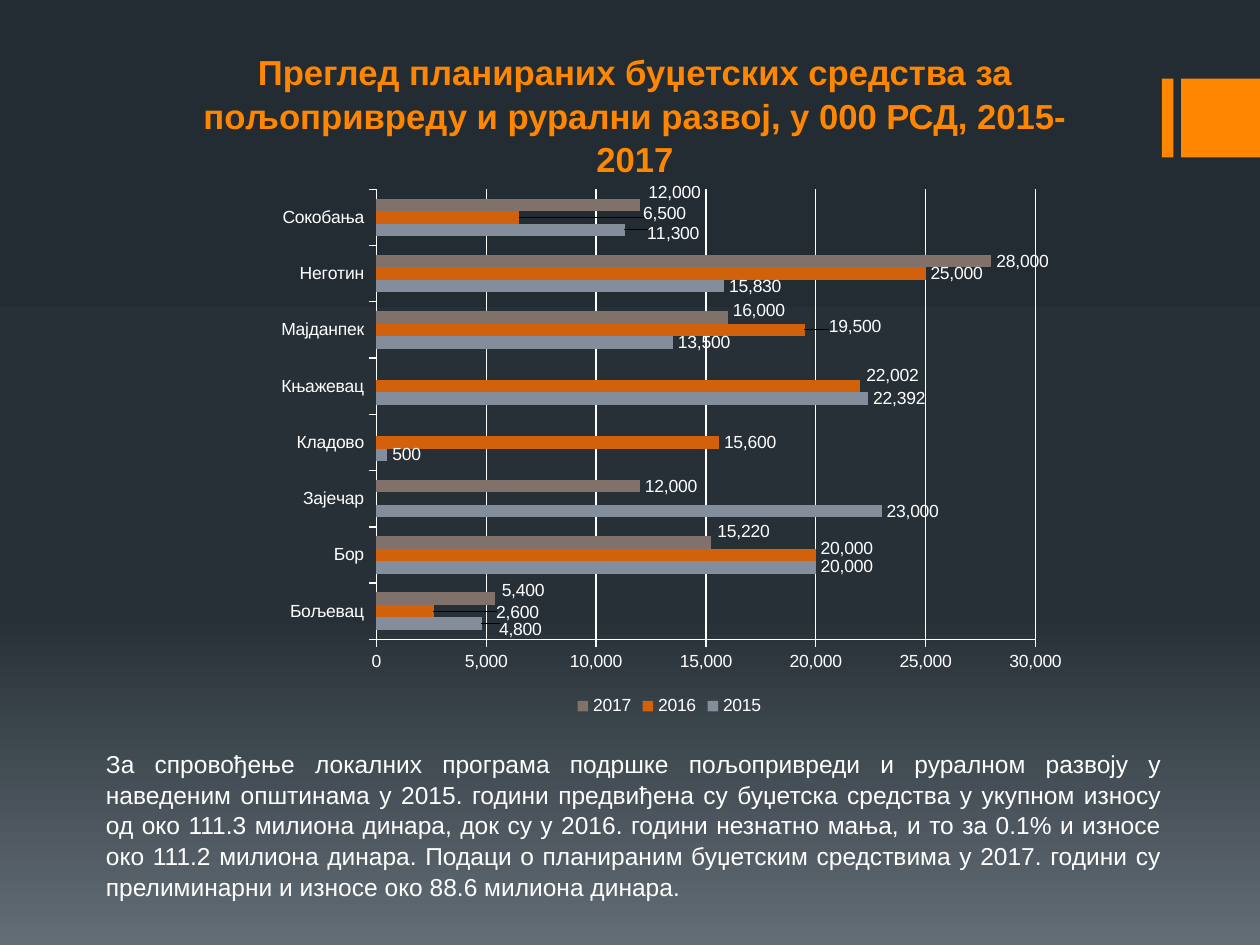
from copy import deepcopy

from lxml.etree import SubElement
from pptx import Presentation
from pptx.chart.data import CategoryChartData
from pptx.dml.color import RGBColor
from pptx.enum.chart import XL_CHART_TYPE as ChartType
from pptx.enum.chart import XL_LABEL_POSITION as LabelPosition
from pptx.enum.chart import XL_LEGEND_POSITION as LegendPosition
from pptx.enum.chart import XL_TICK_MARK as TickMark
from pptx.enum.shapes import MSO_SHAPE as Shape
from pptx.enum.text import MSO_ANCHOR as Anchor
from pptx.enum.text import PP_ALIGN as Align
from pptx.oxml.ns import qn
from pptx.util import Pt

FONT, WHITE, ORANGE = "Arial", "FFFFFF", "FF8600"
NUMBER_FORMAT = "#,##0"

TITLE = ("Преглед планираних буџетских средства за пољопривреду "
         "и рурални развој, у 000 РСД, 2015-2017")
SUMMARY = (
    "За спровођење локалних програма подршке пољопривреди и руралном развоју у "
    "наведеним општинама у 2015. години предвиђена су буџетска средства у укупном "
    "износу од око 111.3 милиона динара, док су у 2016. години незнатно мања, и то "
    "за 0.1% и износе око 111.2 милиона динара. Подаци о планираним буџетским "
    "средствима у 2017. години су прелиминарни и износе око 88.6 милиона динара.")

TOWNS = ["Бољевац", "Бор", "Зајечар", "Кладово",
         "Књажевац", "Мајданпек", "Неготин", "Сокобања"]
# Year: bar colour, values, label shifts in points by town index
BUDGETS = {
    "2015": ("838D9B", [4800, 20000, 23000, 500, 22392, 13500, 15830, 11300],
             {0: (7, 3), 1: (0, -0.5), 7: (10, 2)}),
    "2016": ("D2610C", [2600, 20000, None, 15600, 22002, 19500, 25000, 6500],
             {0: (33, 1), 1: (0, -4), 4: (1, -6), 5: (11, -2), 7: (68, -2)}),
    "2017": ("80716A", [5400, 15220, 12000, None, None, 16000, 28000, 12000],
             {0: (1, -4.5), 1: (1, -6), 5: (0, -4), 7: (2, -7)}),
}


def rgb(value):
    return RGBColor.from_string(value)


def paint_background(page, stops):
    fill = page.background.fill
    fill.gradient()
    fill.gradient_angle = 270
    stop_list = page._element.xpath(".//a:gsLst")[0]
    stop_list.insert(1, deepcopy(stop_list[0]))
    for stop, (position, color) in zip(fill.gradient_stops, stops):
        stop.position = position
        for change in list(stop.color._xFill):
            stop.color._xFill.remove(change)
        stop.color.rgb = rgb(color)


def add_accent(page, left, top, width, height):
    """Thin bar and block at the right edge."""
    bar, gap = 6.5, 4.5
    for x, part_width in ((left, bar), (left + bar + gap, width - bar - gap)):
        block = page.shapes.add_shape(Shape.RECTANGLE, Pt(x), Pt(top),
                                      Pt(part_width), Pt(height))
        block.shadow.inherit = False
        block.fill.solid()
        block.fill.fore_color.rgb = rgb(ORANGE)
        block.line.fill.background()


def add_text(page, left, top, width, height, text, size, color, align, anchor, bold=False):
    box = page.shapes.add_textbox(Pt(left), Pt(top), Pt(width), Pt(height))
    frame = box.text_frame
    frame.word_wrap = True
    frame.vertical_anchor = anchor
    para = frame.paragraphs[0]
    para.text = text
    para.alignment = align
    para.line_spacing = 1.04
    para.font.name, para.font.size, para.font.bold = FONT, Pt(size), bold
    para.font.color.rgb = rgb(color)


def add_layout(parent, **settings):
    """Manual chart layout, as fractions of the chart's size."""
    layout = SubElement(parent, qn("c:layout"))
    manual = SubElement(layout, qn("c:manualLayout"))
    for name, value in settings.items():
        SubElement(manual, qn(f"c:{name}")).set("val", str(value))
    return layout


def style_axis(axis):
    axis.major_tick_mark = TickMark.OUTSIDE
    axis.minor_tick_mark = TickMark.NONE
    axis.format.line.color.rgb = rgb(WHITE)
    axis.format.line.width = Pt(0.75)


def style_series(series, color, shifts, width, height):
    series.format.fill.solid()
    series.format.fill.fore_color.rgb = rgb(color)
    labels = series.data_labels
    labels.show_value = True
    labels.number_format = NUMBER_FORMAT
    labels.number_format_is_linked = False
    labels.position = LabelPosition.OUTSIDE_END
    for index in shifts:
        series.points[index].data_label.position = LabelPosition.OUTSIDE_END
    # Shift the labels that would collide
    for label in series._element.xpath(".//c:dLbl"):
        marker = label.find(qn("c:idx"))
        dx, dy = shifts[int(marker.get("val"))]
        marker.addnext(add_layout(label, x=round(dx / width, 4), y=round(dy / height, 4)))


def add_budget_chart(page, left, top, width, height):
    data = CategoryChartData(number_format=NUMBER_FORMAT)
    data.categories = TOWNS
    for year, (_, values, _) in BUDGETS.items():
        data.add_series(year, values)
    chart = page.shapes.add_chart(ChartType.BAR_CLUSTERED, Pt(left), Pt(top),
                                  Pt(width), Pt(height), data).chart
    chart.has_title = False
    chart.font.name, chart.font.size = FONT, Pt(10)
    chart.font.color.rgb = rgb(WHITE)
    chart.has_legend = True
    chart.legend.position = LegendPosition.BOTTOM
    chart.legend.include_in_layout = False

    # Axes
    style_axis(chart.category_axis)
    values = chart.value_axis
    style_axis(values)
    values.minimum_scale, values.maximum_scale, values.major_unit = 0, 30000, 5000
    values.tick_labels.number_format = NUMBER_FORMAT
    values.tick_labels.number_format_is_linked = False
    values.has_major_gridlines = True
    values.major_gridlines.format.line.color.rgb = rgb(WHITE)
    values.major_gridlines.format.line.width = Pt(0.75)

    # Bars and labels
    plot = chart.plots[0]
    plot.gap_width = 150
    plot.vary_by_categories = False
    for series, (color, _, shifts) in zip(plot.series, BUDGETS.values()):
        style_series(series, color, shifts, width, height)

    # Plot area
    area = chart._chartSpace.xpath(".//c:plotArea")[0]
    for layout in area.findall(qn("c:layout")):
        area.remove(layout)
    area.insert(0, add_layout(area, layoutTarget="inner", xMode="edge", yMode="edge",
                              x=0.14, y=0.02, w=0.81, h=0.83))


def main():
    deck = Presentation()
    deck.slide_width, deck.slide_height = Pt(720), Pt(540)
    page = deck.slides.add_slide(deck.slide_layouts[6])
    paint_background(page, [(0, "242C33"), (0.65, "273037"), (1, "636D76")])
    add_accent(page, 664, 45, 56, 45)
    add_text(page, 93.5, 20, 538.5, 86, TITLE, 19.8, ORANGE,
             Align.CENTER, Anchor.BOTTOM, bold=True)
    add_budget_chart(page, 150, 102, 465, 310)
    add_text(page, 53.5, 424, 617.5, 92, SUMMARY, 14, WHITE, Align.JUSTIFY, Anchor.TOP)
    deck.save("out.pptx")


if __name__ == "__main__":
    main()
